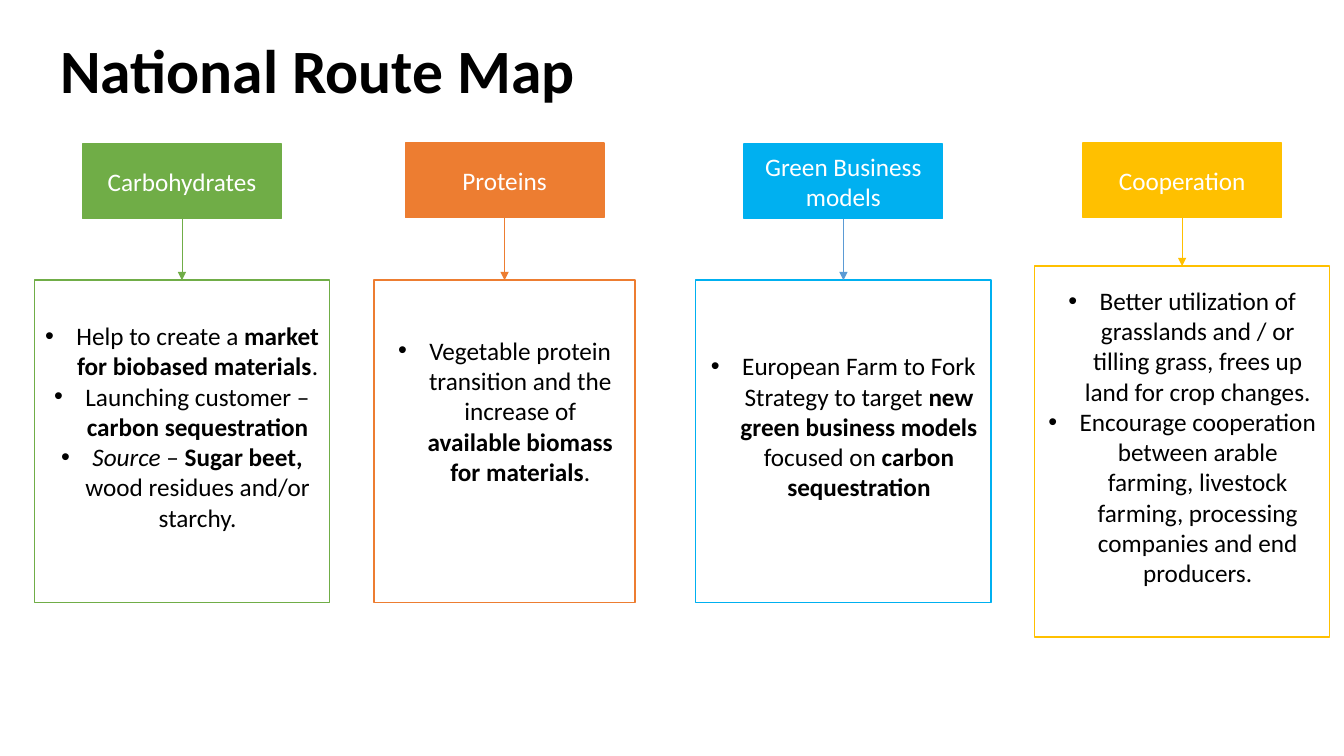
from dataclasses import dataclass

from pptx import Presentation
from pptx.dml.color import RGBColor
from pptx.enum.shapes import MSO_CONNECTOR, MSO_SHAPE
from pptx.enum.text import MSO_ANCHOR, PP_ALIGN
from pptx.oxml.ns import qn
from pptx.util import Pt
from lxml.etree import SubElement

EMU_PER_PX = 9144


def px(length):
    return length * EMU_PER_PX


@dataclass(frozen=True)
class Theme:
    font: str = "Calibri"
    ink: str = "000000"
    paper: str = "FFFFFF"
    green: str = "70AD47"
    orange: str = "ED7D31"
    cyan: str = "00B0F0"
    yellow: str = "FFC000"
    blue: str = "5B9BD5"
    title_size: int = 44
    text_size: int = 18
    border: float = 1
    arrow: float = 0.5


class RouteMap:
    """Draws the parts of the route map on one slide in one theme."""

    def __init__(self, slide, theme):
        self.slide = slide
        self.theme = theme

    def apply(self, target, values):
        for name, value in values.items():
            setattr(target, name, value)

    def add_words(self, paragraph, pieces, size, color):
        for words, marks in pieces:
            run = paragraph.add_run()
            run.text = words
            self.apply(run.font, {"name": self.theme.font, "size": Pt(size),
                                  "bold": "b" in marks, "italic": "i" in marks})
            run.font.color.rgb = RGBColor.from_string(color)

    def title(self, words, left, top, width, height):
        frame = self.slide.shapes.add_textbox(
            px(left), px(top), px(width), px(height)).text_frame
        self.apply(frame, {"word_wrap": True, "vertical_anchor": MSO_ANCHOR.MIDDLE})
        heading = frame.paragraphs[0]
        heading.line_spacing = 0.9
        self.add_words(heading, [(words, "b")], self.theme.title_size, self.theme.ink)

    def box(self, left, top, width, height, color, filled):
        box = self.slide.shapes.add_shape(
            MSO_SHAPE.RECTANGLE, px(left), px(top), px(width), px(height))
        box.shadow.inherit = False
        if filled:
            box.fill.solid()
            box.fill.fore_color.rgb = RGBColor.from_string(color)
        else:
            box.fill.background()
        box.line.color.rgb = RGBColor.from_string(color)
        box.line.width = Pt(self.theme.border)
        self.apply(box.text_frame, {"word_wrap": True,
                                    "vertical_anchor": MSO_ANCHOR.MIDDLE})
        return box

    def header(self, words, left, top, width, height, color):
        header = self.box(left, top, width, height, color, True)
        label = header.text_frame.paragraphs[0]
        label.alignment = PP_ALIGN.CENTER
        self.add_words(label, [(words, "")], self.theme.text_size, self.theme.paper)
        return header

    def goals(self, items, left, top, width, height, color, bottom_inset):
        goals = self.box(left, top, width, height, color, False)
        frame = goals.text_frame
        frame.margin_bottom = px(bottom_inset)
        for index, pieces in enumerate(items):
            goal = frame.add_paragraph() if index else frame.paragraphs[0]
            goal.alignment = PP_ALIGN.CENTER
            self.bullet(goal)
            self.add_words(goal, pieces, self.theme.text_size, self.theme.ink)
        return goals

    def bullet(self, paragraph, indent=31):
        properties = paragraph._p.get_or_add_pPr()
        properties.set("marL", str(px(indent)))
        properties.set("indent", str(px(-indent)))
        SubElement(properties, qn("a:buFont")).set("typeface", "Arial")
        SubElement(properties, qn("a:buChar")).set("char", "•")

    def arrow(self, header, goals, color):
        arrow = self.slide.shapes.add_connector(MSO_CONNECTOR.STRAIGHT, 0, 0, 0, 0)
        arrow.begin_connect(header, 2)
        arrow.end_connect(goals, 0)
        arrow.line.color.rgb = RGBColor.from_string(color)
        arrow.line.width = Pt(self.theme.arrow)
        properties = arrow._element.spPr
        SubElement(properties.find(qn("a:ln")), qn("a:tailEnd")).set("type", "triangle")
        SubElement(properties, qn("a:effectLst"))


def main():
    theme = Theme()
    deck = Presentation()
    deck.slide_width, deck.slide_height = px(1333), px(750)
    route_map = RouteMap(deck.slides.add_slide(deck.slide_layouts[6]), theme)
    route_map.title("National Route Map", 50, 0, 1150, 145)

    carbohydrates = [
        [("Help to create a ", ""), ("market for biobased materials", "b"), (".", "")],
        [("Launching customer – ", ""), ("carbon sequestration", "b")],
        [("Source ", "i"), ("– ", ""), ("Sugar beet, ", "b"),
         ("wood residues and/or starchy.", "")],
    ]
    proteins = [
        [("Vegetable protein transition and the increase of ", ""),
         ("available biomass for materials", "b"), (".", "")],
    ]
    business_models = [
        [("European Farm to Fork Strategy to target ", ""),
         ("new green business models ", "b"), ("focused on ", ""),
         ("carbon sequestration", "b")],
    ]
    cooperation = [
        [("Better utilization of grasslands and / or tilling grass, "
          "frees up land for crop changes.", "")],
        [("Encourage cooperation between arable farming, livestock farming, "
          "processing companies and end producers.", "")],
    ]
    routes = [
        ("Carbohydrates", carbohydrates, theme.green, theme.green,
         143, 34, 278, 293, 320, 35),
        ("Proteins", proteins, theme.orange, theme.orange,
         142, 371, 278, 259, 320, 66),
        ("Green Business models", business_models, theme.cyan, theme.blue,
         143, 690, 278, 293, 320, 35),
        ("Cooperation", cooperation, theme.yellow, theme.yellow,
         142, 1026, 264, 293, 368, 35),
    ]
    header_width, header_height = 197, 74
    for (name, items, color, arrow_color, header_top,
         left, top, width, height, bottom_inset) in routes:
        header_left = left + (width - header_width) // 2
        header = route_map.header(name, header_left, header_top,
                                  header_width, header_height, color)
        goals = route_map.goals(items, left, top, width, height, color, bottom_inset)
        route_map.arrow(header, goals, arrow_color)

    deck.save("out.pptx")


if __name__ == "__main__":
    main()
